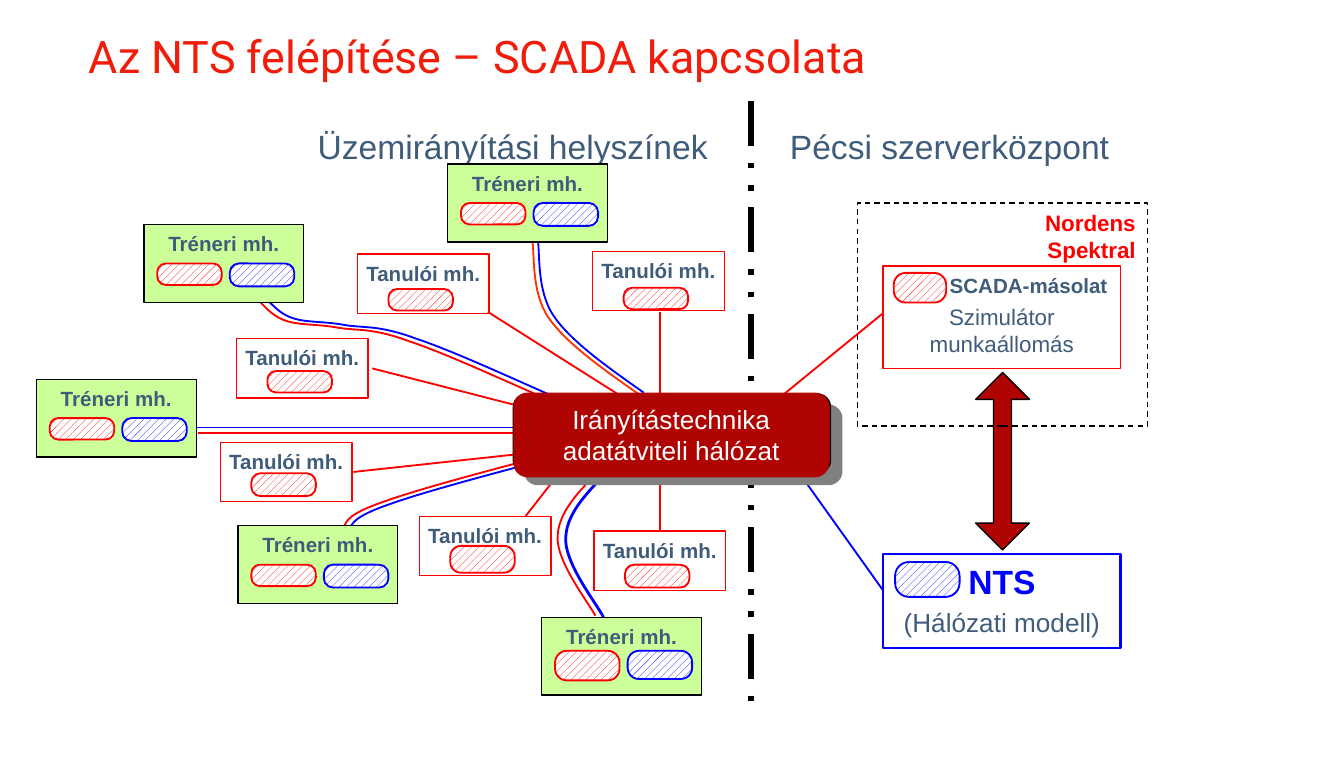
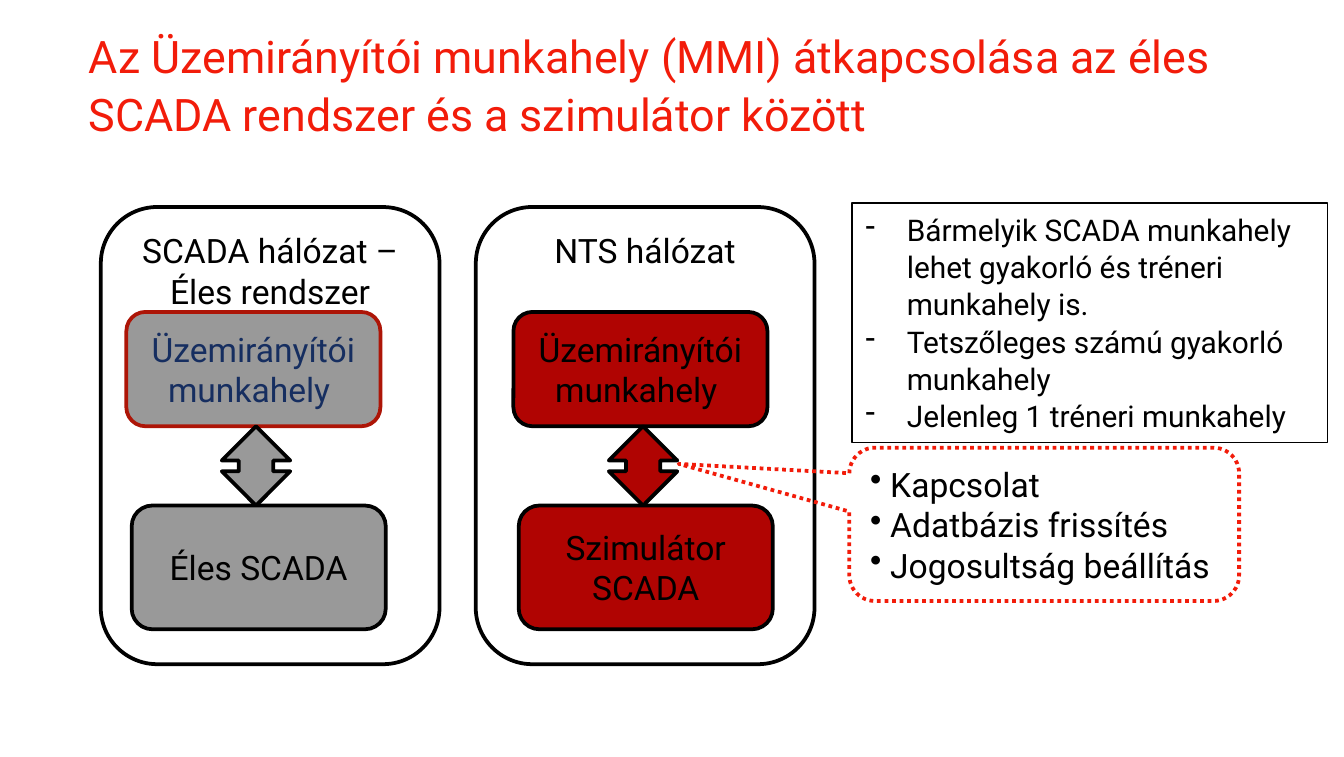
from lxml.etree import SubElement
from pptx import Presentation
from pptx.dml.color import RGBColor as RGB
from pptx.enum.dml import MSO_LINE as Dash, MSO_PATTERN as Pattern
from pptx.enum.shapes import MSO_CONNECTOR as Conn, MSO_SHAPE as Geo
from pptx.enum.text import MSO_ANCHOR as Anchor, PP_ALIGN as Align
from pptx.oxml.ns import qn
from pptx.util import Pt

PX = 9144  # 100 px to the inch
RED = RGB(0xFF, 0, 0)
ORANGE = RGB(0xFF, 0x33, 0)
BLUE = RGB(0, 0, 0xFF)
DARK = RGB(0xB0, 0x04, 0x02)
BRICK = RGB(0xAD, 0x15, 0x07)
TITLE = RGB(0xF2, 0x1C, 0x0A)
SLATE = RGB(0x3F, 0x5C, 0x7B)
NAVY = RGB(0x16, 0x2E, 0x60)
LIME = RGB(0xCC, 0xFF, 0x99)
GREY = RGB(0x99, 0x99, 0x99)
BLACK = RGB(0, 0, 0)
WHITE = RGB(0xFF, 0xFF, 0xFF)

# Student boxes: left, top, drop of the pill, height of the pill
STUDENTS = [
    (266, 189, 26, 16), (441, 187, 27, 16), (176, 252, 24, 16),
    (164, 329, 23, 17), (312, 384, 22, 20), (442, 395, 25, 17),
]
# Links from the student boxes to the network
LINKS = [
    (491, 395, 491, 351), (391, 384, 423, 343), (263, 351, 402, 336),
    (277, 274, 402, 306), (363, 232, 480, 306), (491, 232, 491, 306),
]
# Trainer boxes: left, top, drop of the pills, height of the red and blue pill
TRAINERS = [
    (403, 459, 25, 22, 21), (177, 391, 29, 16, 17), (107, 167, 29, 16, 17),
    (333, 122, 29, 16, 17), (27, 282, 29, 16, 17),
]
# Blue curve, shift of the red twin, red colour, width of the blue line
CURVES = [
    ([(457, 346), (440, 363), (422, 380), (421, 399),
      (419, 418), (444, 449), (449, 459)], (-6, -1), RED, 1.5),
    ([(413, 340), (364, 353), (315, 366), (290, 375),
      (264, 384), (262, 389), (260, 394)], (-4, -2), RED, 1),
    ([(419, 298), (378, 280), (337, 261), (310, 252), (283, 242),
      (273, 244), (258, 242), (243, 239), (229, 240), (219, 237),
      (209, 234), (204, 228), (199, 223)], (-5, 2), RED, 1),
    ([(479, 292), (452, 273), (425, 254), (412, 235),
      (399, 216), (402, 187), (400, 177)], (-4, 1), ORANGE, 1),
]


def emu(*vals):
    return [v * PX for v in vals]


def stroke(line, color, width, dash=None):
    line.color.rgb = color
    line.width = Pt(width)
    if dash:
        line.dash_style = dash


def shape(slide, geo, at, fill=None, edge=None, width=0.75, dash=None, adj=()):
    item = slide.shapes.add_shape(geo, *emu(*at))
    item.shadow.inherit = False
    if fill is None:
        item.fill.background()
    else:
        item.fill.solid()
        item.fill.fore_color.rgb = fill
    if edge is None:
        item.line.fill.background()
    else:
        stroke(item.line, edge, width, dash)
    for i, val in enumerate(adj):
        item.adjustments[i] = val
    return item


def style(para, size, color, font="Arial", bold=False, align=Align.CENTER):
    para.alignment = align
    for run in para.runs:
        run.font.name = font
        run.font.size = Pt(size)
        run.font.bold = bold
        run.font.color.rgb = color


def write(item, text, size, color, anchor=Anchor.TOP, wrap=True, **look):
    """Fill a shape with text, all paragraphs in one style."""
    frame = item.text_frame
    frame.word_wrap = wrap
    frame.vertical_anchor = anchor
    frame.text = text
    for para in frame.paragraphs:
        style(para, size, color, **look)
    return frame


def label(slide, at, text, size, color, **look):
    item = slide.shapes.add_textbox(*emu(*at))
    return write(item, text, size, color, **look)


def title(slide, text):
    frame = label(slide, (66, 18, 867, 50), text, 24, TITLE,
                  font="Roboto", align=Align.LEFT)
    frame.margin_left = frame.margin_right = 0
    frame.margin_top = frame.margin_bottom = 0
    frame.paragraphs[0].line_spacing = Pt(31)


def bullets(frame, mark, indent):
    for para in frame.paragraphs:
        props = para._p.get_or_add_pPr()
        props.set("marL", str(indent * PX))
        props.set("indent", str(-indent * PX))
        SubElement(props, qn("a:buChar")).set("char", mark)


def line(slide, ends, color, width=1, dash=None):
    item = slide.shapes.add_connector(Conn.STRAIGHT, *emu(*ends))
    stroke(item.line, color, width, dash)
    SubElement(item._element.spPr, qn("a:effectLst"))


def curve(slide, points, color, width=1):
    """Draw a Bezier line: a start, then three points for each arc."""
    pen = slide.shapes.build_freeform(*points[0], scale=PX)
    pen.add_line_segments(points[1:], close=False)
    item = pen.convert_to_shape()
    item.shadow.inherit = False
    item.fill.background()
    stroke(item.line, color, width)
    steps = list(item._element.iter(qn("a:lnTo")))
    track = steps[0].getparent()
    for i in range(0, len(steps), 3):
        arc = SubElement(track, qn("a:cubicBezTo"))
        for step in steps[i:i + 3]:
            arc.append(step[0])
            track.remove(step)


def pill(slide, at, color):
    item = shape(slide, Geo.ROUNDED_RECTANGLE, at, WHITE, color, 1, adj=[0.4])
    item.fill.patterned()
    item.fill.pattern = Pattern.WIDE_UPWARD_DIAGONAL
    item.fill.fore_color.rgb = color
    item.fill.back_color.rgb = WHITE


def student(slide, x, y, drop, high):
    box = shape(slide, Geo.RECTANGLE, (x, y, 98, 44), edge=RED)
    write(box, "Tanulói mh.", 11, SLATE, wrap=False, bold=True)
    pill(slide, (x + 23, y + drop, 48, high), RED)


def trainer(slide, x, y, drop, red, blue):
    box = shape(slide, Geo.RECTANGLE, (x, y, 119, 58), LIME, BLACK)
    write(box, "Tréneri mh.", 11, SLATE, wrap=False, bold=True)
    pill(slide, (x + 64, y + drop, 48, blue), BLUE)
    pill(slide, (x + 10, y + drop, 48, red), RED)


def server(slide):
    """Draw the server centre on the right side."""
    shape(slide, Geo.UP_DOWN_ARROW, (726, 277, 40, 132), DARK, BLACK,
          adj=[0.5, 0.333])
    shape(slide, Geo.RECTANGLE, (638, 151, 216, 166), edge=BLACK,
          dash=Dash.DASH)
    label(slide, (711, 151, 144, 50), "Nordens Spektral", 12, RED,
          bold=True, align=Align.RIGHT)
    line(slide, (587, 341, 657, 439), BLUE)
    line(slide, (657, 233, 581, 295), RED)

    box = shape(slide, Geo.RECTANGLE, (657, 198, 177, 76), edge=RED)
    frame = write(box, "SCADA-másolat\nSzimulátor munkaállomás", 12, SLATE)
    style(frame.paragraphs[0], 11, SLATE, bold=True, align=Align.RIGHT)
    frame.paragraphs[1].space_before = Pt(3)
    pill(slide, (665, 203, 39, 22), RED)

    box = shape(slide, Geo.RECTANGLE, (657, 412, 177, 70), edge=BLUE, width=1.5)
    frame = write(box, "NTS\n(Hálózati modell)", 14, SLATE)
    style(frame.paragraphs[0], 18, BLUE, bold=True)
    frame.paragraphs[1].space_before = Pt(3)
    pill(slide, (666, 418, 48, 26), BLUE)


def network(slide):
    back = shape(slide, Geo.ROUNDED_RECTANGLE, (382, 293, 236, 59), DARK, BLACK)
    glow = back._element.spPr.find(qn("a:effectLst"))
    cast = SubElement(glow, qn("a:outerShdw"), dist=str(Pt(8.5)),
                      dir="2700000", algn="ctr", rotWithShape="0")
    SubElement(cast, qn("a:srgbClr"), val="808080")
    front = shape(slide, Geo.ROUNDED_RECTANGLE, (382, 292, 235, 63), DARK)
    write(front, "Irányítástechnika adatátviteli hálózat", 14, WHITE)


def layout(slide):
    """Build the slide on how the simulator is laid out."""
    server(slide)
    label(slide, (559, 89, 295, 40), "Pécsi szerverközpont", 18, SLATE)
    line(slide, (559, 75, 559, 533), BLACK, 3, Dash.DASH_DOT_DOT)
    label(slide, (224, 89, 315, 40), "Üzemirányítási helyszínek", 18, SLATE)
    for ends in LINKS:
        line(slide, ends, RED)
    for row in STUDENTS:
        student(slide, *row)
    for points, (dx, dy), color, width in CURVES:
        curve(slide, points, BLUE, width)
        curve(slide, [(x + dx, y + dy) for x, y in points], color)
    for row in TRAINERS:
        trainer(slide, *row)
    line(slide, (383, 318, 146, 318), BLUE)
    line(slide, (384, 322, 147, 322), RED)
    network(slide)
    title(slide, "Az NTS felépítése – SCADA kapcsolata")


def system(slide, x, name, desk, base, fill, edge, color):
    """Draw one system: desk = left of the desk box, base = text below."""
    def box(at, text, fill, edge, color, anchor):
        item = shape(slide, Geo.ROUNDED_RECTANGLE, at, fill, edge, 2)
        write(item, text, 18, color, anchor, font="Roboto")

    mid = Anchor.MIDDLE
    box((desk, 232, 189, 85), "Üzemirányítói munkahely ", fill, edge, color, mid)
    box((desk + 4, 376, 189, 92), base, fill, BLACK, BLACK, mid)
    box((x, 154, 252, 340), name, None, BLACK, BLACK, Anchor.TOP)
    shape(slide, Geo.UP_DOWN_ARROW, (desk + 71, 317, 51, 59), fill, BLACK, 2)


def switch(slide):
    """Build the slide on switching between the two systems."""
    system(slide, 75, "SCADA hálózat – Éles rendszer", 94, "Éles SCADA",
           GREY, BRICK, NAVY)
    system(slide, 354, "NTS hálózat", 382, "Szimulátor SCADA",
           DARK, BLACK, BLACK)

    note = shape(slide, Geo.ROUNDED_RECTANGULAR_CALLOUT, (632, 333, 290, 114),
                 edge=TITLE, width=2, dash=Dash.ROUND_DOT,
                 adj=[-0.938, -0.394, 0.167])
    frame = write(note, "Kapcsolat\nAdatbázis frissítés\nJogosultság beállítás",
                  18, BLACK, Anchor.MIDDLE, font="Roboto", align=Align.LEFT)
    bullets(frame, "•", 15)

    title(slide, "Az Üzemirányítói munkahely (MMI) átkapcsolása az éles "
                 "SCADA rendszer és a szimulátor között")

    facts = shape(slide, Geo.RECTANGLE, (634, 151, 354, 178), edge=BLACK)
    frame = write(facts, "Bármelyik SCADA munkahely lehet gyakorló és tréneri "
                         "munkahely is.\nTetszőleges számú gyakorló munkahely\n"
                         "Jelenleg 1 tréneri munkahely",
                  16, BLACK, font="Roboto", align=Align.LEFT)
    bullets(frame, "-", 31)
    for para in frame.paragraphs:
        para.line_spacing = Pt(20)


def main():
    deck = Presentation()
    deck.slide_width, deck.slide_height = emu(1000, 563)
    for build in (layout, switch):
        build(deck.slides.add_slide(deck.slide_layouts[6]))
    deck.save("out.pptx")


if __name__ == "__main__":
    main()
